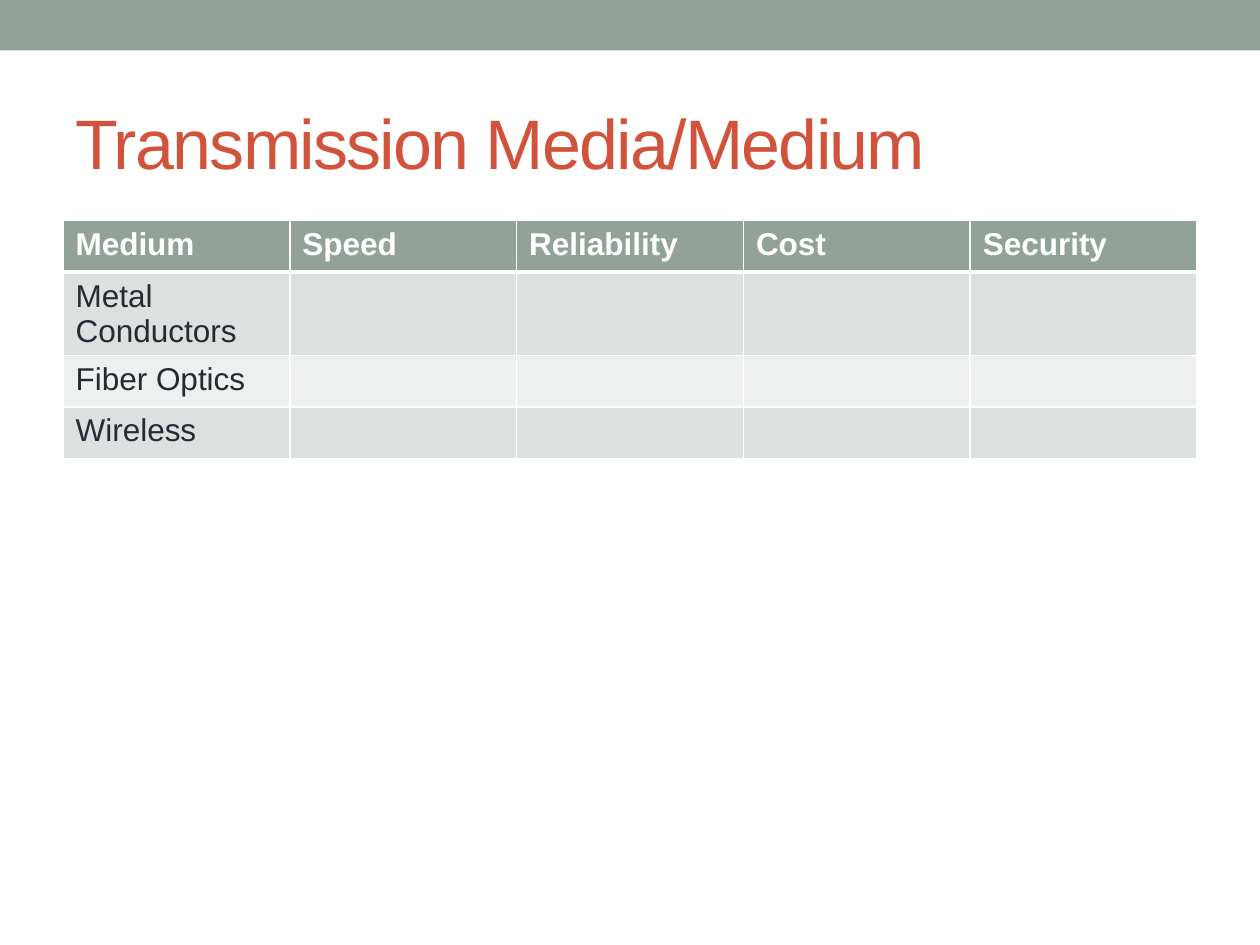
from dataclasses import dataclass

from lxml.etree import SubElement
from pptx import Presentation
from pptx.dml.color import RGBColor as RGB
from pptx.enum.shapes import MSO_SHAPE as SHAPE
from pptx.enum.text import MSO_ANCHOR as ANCHOR, PP_ALIGN as ALIGN
from pptx.oxml.ns import qn
from pptx.util import Inches, Pt


@dataclass(frozen=True)
class Theme:
    font: str = "Arial"
    accent: str = "93A299"
    title: str = "D2533C"
    text: str = "292934"
    white: str = "FFFFFF"
    bands: tuple = ("DCE0DE", "EEF0EF")
    title_size: int = 40
    table_size: int = 18


theme = Theme()


def write(tf, text, size, color, bold=False, spacing=0):
    p = tf.paragraphs[0]
    p.alignment = ALIGN.LEFT
    r = p.add_run()
    r.text = text
    r.font.name, r.font.size, r.font.bold = theme.font, Pt(size), bold
    r.font.color.rgb = RGB.from_string(color)
    if spacing:
        r.font._element.set("spc", str(spacing * 100))


def set_border(cell, side, color, width):
    ln = SubElement(cell._tc.get_or_add_tcPr(), qn(f"a:ln{side}"), w=str(Pt(width)))
    fill = SubElement(ln, qn("a:solidFill"))
    SubElement(fill, qn("a:srgbClr"), val=color)


prs = Presentation()
prs.slide_width, prs.slide_height = Inches(10), Inches(7.5)
slide = prs.slides.add_slide(prs.slide_layouts[5])

# Top band
band = slide.shapes.add_shape(SHAPE.RECTANGLE, 0, 0, prs.slide_width, Inches(0.4))
band.shadow.inherit = False
band.fill.solid()
band.fill.fore_color.rgb = RGB.from_string(theme.accent)
band.line.fill.background()

# Title
title = slide.shapes.title
title.left, title.top = Inches(0.5), Inches(0.58)
title.width, title.height = Inches(9), Inches(1.08)
title.text_frame.vertical_anchor = ANCHOR.MIDDLE
write(title.text_frame, "Transmission Media/Medium",
      size=theme.title_size, color=theme.title, spacing=-1)

# Comparison table: only the first column is filled in below the header
headers = ["Medium", "Speed", "Reliability", "Cost", "Security"]
media = ["Metal Conductors", "Fiber Optics", "Wireless"]
rows = [headers] + [[m] + [""] * (len(headers) - 1) for m in media]
row_height = Inches(0.41)
table = slide.shapes.add_table(len(rows), len(headers), Inches(0.5), Inches(1.75),
                               Inches(9), row_height * len(rows)).table

for i, row in enumerate(rows):
    table.rows[i].height = row_height
    is_header = i == 0
    fill = theme.accent if is_header else theme.bands[(i - 1) % 2]
    for j, text in enumerate(row):
        cell = table.cell(i, j)
        for side in "LRTB":
            thick = (is_header and side == "B") or (i == 1 and side == "T")
            set_border(cell, side, theme.white, 3 if thick else 1)
        cell.fill.solid()
        cell.fill.fore_color.rgb = RGB.from_string(fill)
        if text:
            write(cell.text_frame, text, size=theme.table_size, bold=is_header,
                  color=theme.white if is_header else theme.text)

prs.save("out.pptx")
